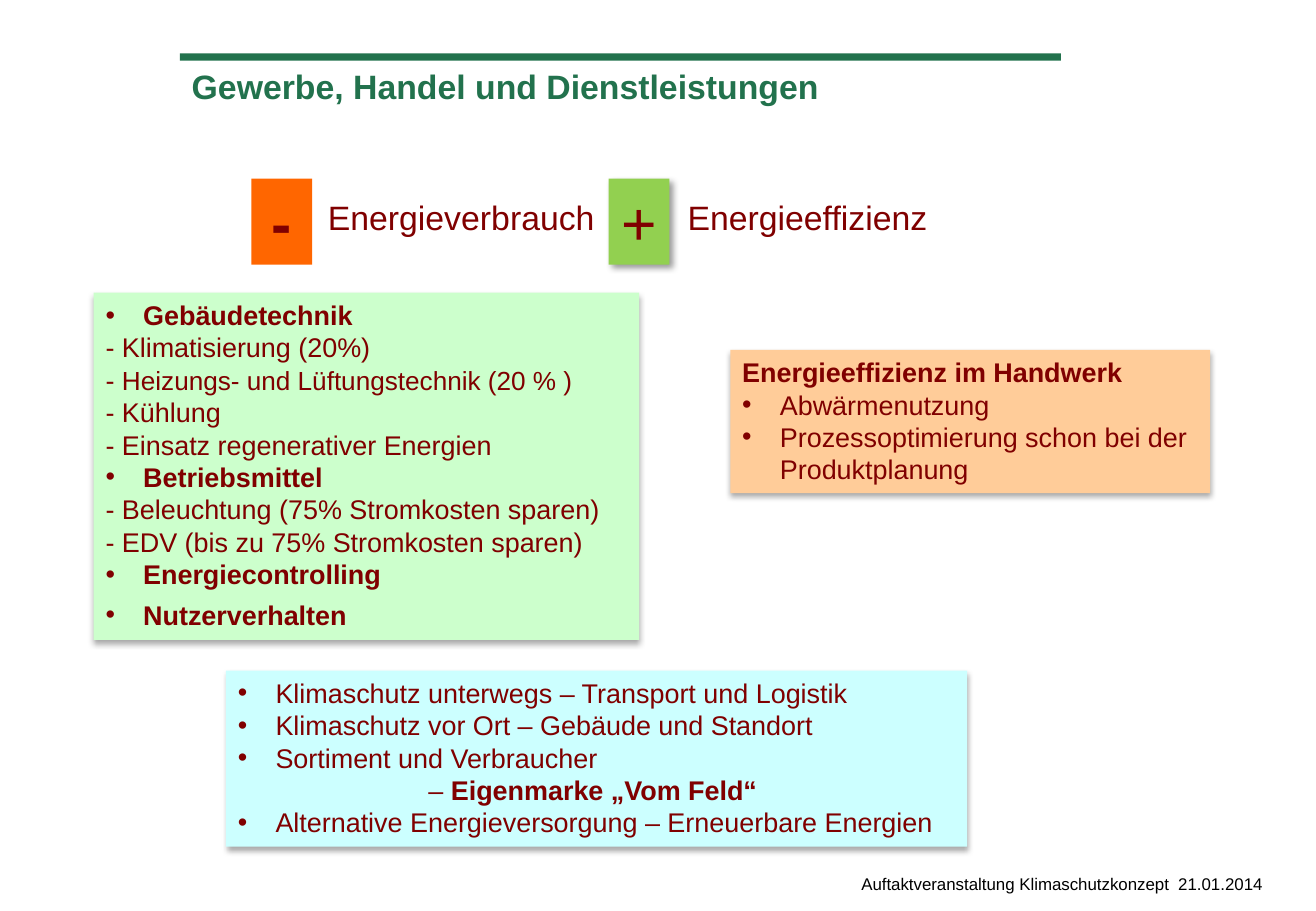
from lxml.etree import SubElement
from pptx import Presentation
from pptx.dml.color import RGBColor
from pptx.enum.shapes import MSO_SHAPE
from pptx.enum.text import MSO_ANCHOR, PP_ALIGN
from pptx.oxml.ns import qn
from pptx.util import Pt

EMU_PER_PX = 9144  # 100 px to the inch
COLORS = {
    "brand_green": "22724D", "text_red": "800000", "black": "000000",
    "mint": "CCFFCC", "peach": "FFCC99", "orange": "FF6600",
    "lime": "92D050", "aqua": "CCFFFF",
}
# opacity in percent, blur and distance in points, angle in degrees
SOFT_SHADOW = (32, 3.5, 2.2, 90)
CORNER_SHADOW = (40, 4, 3, 45)


def px(*lengths):
    return [length * EMU_PER_PX for length in lengths]


def line(*runs, **options):
    """Describe one paragraph; a run is a text or a (text, format) pair."""
    return {"runs": runs, **options}


def bold(text):
    return text, {"bold": True}


def bullet(*runs, **options):
    return line(*runs, bullet=True, **options)


class Sheet:
    font_name = "Arial"
    line_factor = 1.2
    bullet_indent = 31

    def __init__(self, slide):
        self.slide = slide

    def block(self, at, color, shadow=None):
        block = self.slide.shapes.add_shape(MSO_SHAPE.RECTANGLE, *px(*at))
        block.fill.solid()
        block.fill.fore_color.rgb = RGBColor.from_string(COLORS[color])
        block.line.fill.background()
        block.shadow.inherit = False
        if shadow:
            self.cast_shadow(block, *shadow)
        return block

    def cast_shadow(self, block, opacity, blur, distance, angle):
        effects = block._element.spPr.find(qn("a:effectLst"))
        outer = SubElement(effects, qn("a:outerShdw"), {
            "blurRad": str(Pt(blur)), "dist": str(Pt(distance)),
            "dir": str(angle * 60000), "rotWithShape": "0"})
        tint = SubElement(outer, qn("a:srgbClr"), val=COLORS["black"])
        SubElement(tint, qn("a:alpha"), val=str(opacity * 1000))

    def label(self, at, text, size, color="text_red", **style):
        box = self.slide.shapes.add_textbox(*px(*at))
        self.fill_text(box, [line(text)], size, color, **style)

    def card(self, at, color, lines):
        self.fill_text(self.block(at, color, SOFT_SHADOW), lines, 16)

    def sign(self, at, color, symbol, shadow=None, **style):
        badge = self.block(at, color, shadow)
        self.fill_text(badge, [line(symbol, align=PP_ALIGN.CENTER)], 36,
                       wrap=False, **style)

    def fill_text(self, shape, lines, size, color="text_red", wrap=True,
                  **style):
        frame = shape.text_frame
        frame.word_wrap = wrap
        frame.vertical_anchor = MSO_ANCHOR.TOP
        for index, content in enumerate(lines):
            paragraph = frame.add_paragraph() if index else frame.paragraphs[0]
            if content.get("bullet"):
                self.add_bullet(paragraph)
            paragraph.alignment = content.get("align", PP_ALIGN.LEFT)
            tallest = content.get("line_size", size)
            paragraph.line_spacing = Pt(tallest * self.line_factor)
            for part in content["runs"]:
                text, changes = (part, {}) if isinstance(part, str) else part
                run = paragraph.add_run()
                run.text = text
                run.font.color.rgb = RGBColor.from_string(COLORS[color])
                values = {"name": self.font_name, "size": Pt(size),
                          "bold": False, **style, **changes}
                for key, value in values.items():
                    setattr(run.font, key, value)

    def add_bullet(self, paragraph):
        properties = paragraph._p.get_or_add_pPr()
        indent, = px(self.bullet_indent)
        properties.set("marL", str(indent))
        properties.set("indent", str(-indent))
        SubElement(properties, qn("a:buFont"), typeface=self.font_name)
        SubElement(properties, qn("a:buChar"), char="•")


def main():
    presentation = Presentation()
    presentation.slide_width, presentation.slide_height = px(1083, 750)
    sheet = Sheet(presentation.slides.add_slide(presentation.slide_layouts[6]))

    sheet.block((148, 44, 725, 6), "brand_green")
    sheet.label((699, 714, 384, 31),
                "Auftaktveranstaltung Klimaschutzkonzept  21.01.2014",
                10, "black")
    sheet.label((148, 49, 716, 93), "Gewerbe, Handel und Dienstleistungen",
                20, "brand_green", bold=True)

    sheet.label((260, 157, 240, 44), "Energieverbrauch", 20)
    sheet.label((556, 157, 240, 44), "Energieeffizienz", 20)
    sheet.sign((207, 147, 50, 71), "orange", "-", bold=True)
    sheet.sign((501, 147, 50, 71), "lime", "+", CORNER_SHADOW)

    sheet.card((77, 241, 449, 286), "mint", [
        bullet(bold("Gebäudetechnik")),
        line("- Klimatisierung (20%)"),
        line("- ", ("Heizungs- und Lüftungstechnik (20 % )",
                    {"size": Pt(15.5)})),
        line("- Kühlung"),
        line("- Einsatz regenerativer Energien"),
        bullet(bold("Betriebsmittel")),
        line("- Beleuchtung (75% Stromkosten sparen)"),
        line("- EDV (bis zu 75% Stromkosten sparen)"),
        bullet(bold("Energiecontrolling")),
        bullet(bold("Nutzerverhalten"), line_size=20),
    ])
    sheet.card((601, 288, 395, 118), "peach", [
        line(bold("Energieeffizienz im Handwerk")),
        bullet("Abwärmenutzung"),
        bullet("Prozessoptimierung schon bei der Produktplanung"),
    ])
    sheet.card((186, 552, 610, 145), "aqua", [
        bullet("Klimaschutz unterwegs – Transport und Logistik"),
        bullet("Klimaschutz vor Ort – Gebäude und Standort"),
        bullet("Sortiment und Verbraucher"),
        line("– ", bold("Eigenmarke „Vom Feld“ "), align=PP_ALIGN.CENTER),
        bullet("Alternative Energieversorgung – Erneuerbare Energien"),
    ])
    presentation.save("out.pptx")


if __name__ == "__main__":
    main()
